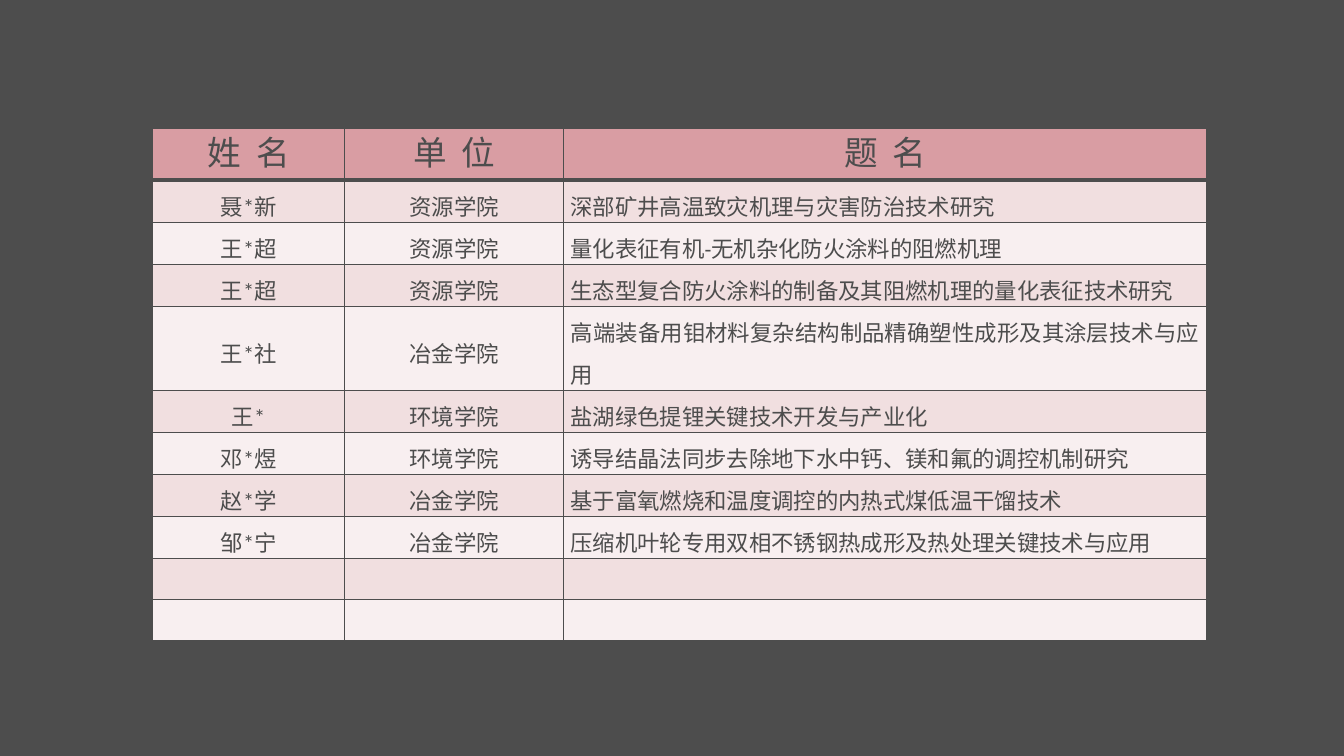
from dataclasses import dataclass

from lxml.etree import SubElement
from pptx import Presentation
from pptx.dml.color import RGBColor
from pptx.enum.text import MSO_ANCHOR, PP_ALIGN
from pptx.oxml.ns import qn
from pptx.table import _Cell
from pptx.util import Inches, Length, Pt

SLIDE_WIDTH = Inches(13.33)
SLIDE_HEIGHT = Inches(7.5)


@dataclass(frozen=True)
class Theme:
    ink: str = "4D4D4D"
    header_fill: str = "D99DA3"
    band_fills: tuple[str, str] = ("F1DFE0", "F8EFF0")
    font: str = "Calibri"
    header_size: int = 24
    body_size: int = 16
    line_spacing: int = 30
    header_tracking: int = 270


@dataclass(frozen=True)
class Column:
    heading: str
    width: float
    alignment: PP_ALIGN


@dataclass(frozen=True)
class Project:
    person: str = ""
    college: str = ""
    topic: str = ""


THEME = Theme()

# Widths and heights are percentages of the slide's size.
TABLE_LEFT, TABLE_TOP, TABLE_HEIGHT, ROW_HEIGHT = 11.33, 16.93, 68, 5.47
COLUMNS = [
    Column("姓 名", 14.33, PP_ALIGN.CENTER),
    Column("单 位", 16.28, PP_ALIGN.CENTER),
    Column("题 名", 47.86, PP_ALIGN.JUSTIFY),
]
PROJECTS = [
    Project("聂*新", "资源学院", "深部矿井高温致灾机理与灾害防治技术研究"),
    Project("王*超", "资源学院", "量化表征有机-无机杂化防火涂料的阻燃机理"),
    Project("王*超", "资源学院", "生态型复合防火涂料的制备及其阻燃机理的量化表征技术研究"),
    Project("王*社", "冶金学院", "高端装备用钼材料复杂结构制品精确塑性成形及其涂层技术与应用"),
    Project("王*", "环境学院", "盐湖绿色提锂关键技术开发与产业化"),
    Project("邓*煜", "环境学院", "诱导结晶法同步去除地下水中钙、镁和氟的调控机制研究"),
    Project("赵*学", "冶金学院", "基于富氧燃烧和温度调控的内热式煤低温干馏技术"),
    Project("邹*宁", "冶金学院", "压缩机叶轮专用双相不锈钢热成形及热处理关键技术与应用"),
    Project(),
    Project(),
]


def across(percent: float) -> Length:
    return Length(round(SLIDE_WIDTH * percent / 100))


def down(percent: float) -> Length:
    return Length(round(SLIDE_HEIGHT * percent / 100))


def style_cell(cell: _Cell, fill: str, bottom_border: int = 1) -> None:
    """Draw the borders, then the fill, in the order the file format needs."""
    properties = cell._tc.get_or_add_tcPr()
    for side, points in (("L", 1), ("R", 1), ("T", 1), ("B", bottom_border)):
        line = SubElement(properties, qn(f"a:ln{side}"), w=str(Pt(points)))
        SubElement(SubElement(line, qn("a:solidFill")), qn("a:srgbClr"), val=THEME.ink)
    cell.fill.solid()
    cell.fill.fore_color.rgb = RGBColor.from_string(fill)


def write_cell(cell: _Cell, text: str, size: int, alignment: PP_ALIGN, tracking: int = 0) -> None:
    cell.text_frame.text = text
    paragraph = cell.text_frame.paragraphs[0]
    paragraph.alignment = alignment
    paragraph.line_spacing = Pt(THEME.line_spacing)
    for run in paragraph.runs:
        run.font.name = THEME.font
        run.font.size = Pt(size)
        run.font.bold = False
        run.font.color.rgb = RGBColor.from_string(THEME.ink)
        if tracking:
            run.font._element.set("spc", str(tracking))


def write_body_cell(cell: _Cell, text: str, alignment: PP_ALIGN) -> None:
    write_cell(cell, text, THEME.body_size, alignment)
    cell.vertical_anchor = MSO_ANCHOR.MIDDLE
    cell.margin_left = cell.margin_right = Inches(0.07)
    cell.margin_top = cell.margin_bottom = 0


def main() -> None:
    presentation = Presentation()
    presentation.slide_width = SLIDE_WIDTH
    presentation.slide_height = SLIDE_HEIGHT
    slide = presentation.slides.add_slide(presentation.slide_layouts[6])
    slide.background.fill.solid()
    slide.background.fill.fore_color.rgb = RGBColor.from_string(THEME.ink)

    table_frame = slide.shapes.add_table(
        len(PROJECTS) + 1, len(COLUMNS),
        across(TABLE_LEFT), down(TABLE_TOP),
        across(sum(column.width for column in COLUMNS)), down(TABLE_HEIGHT),
    )
    table = table_frame.table
    table.first_row = table.horz_banding = False
    for row in table.rows:
        row.height = down(ROW_HEIGHT)

    for column_index, column in enumerate(COLUMNS):
        table.columns[column_index].width = across(column.width)
        header = table.cell(0, column_index)
        style_cell(header, THEME.header_fill, bottom_border=3)
        write_cell(header, column.heading, THEME.header_size, PP_ALIGN.CENTER, THEME.header_tracking)

    for row_index, project in enumerate(PROJECTS):
        texts = (project.person, project.college, project.topic)
        for column_index, (column, text) in enumerate(zip(COLUMNS, texts)):
            cell = table.cell(row_index + 1, column_index)
            style_cell(cell, THEME.band_fills[row_index % 2])
            if text:
                write_body_cell(cell, text, column.alignment)

    table_frame.height = down(TABLE_HEIGHT)
    presentation.save("out.pptx")


if __name__ == "__main__":
    main()
